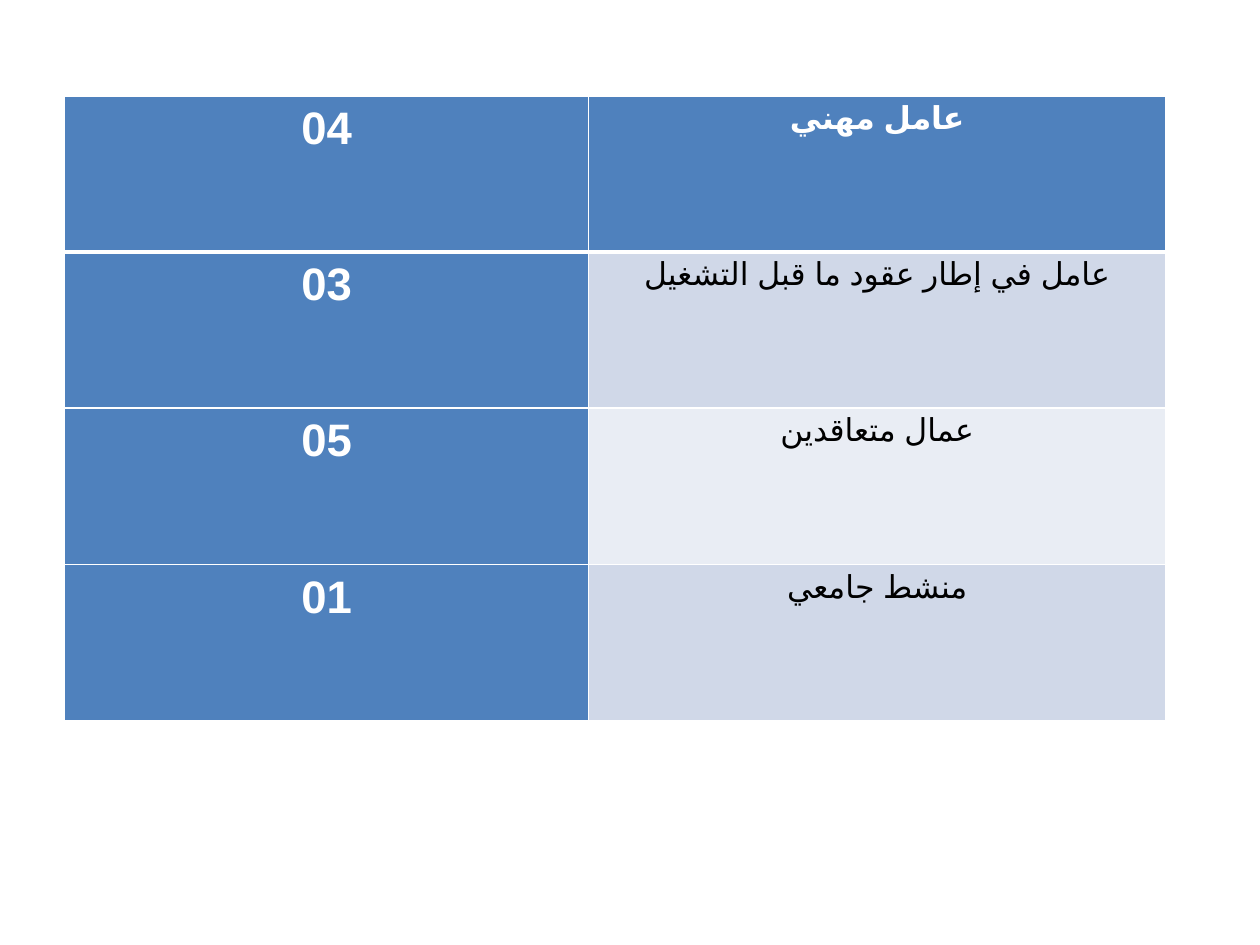
from lxml import etree
from pptx import Presentation
from pptx.dml.color import RGBColor
from pptx.enum.text import MSO_ANCHOR, PP_ALIGN
from pptx.oxml.ns import qn
from pptx.util import Pt

CENTER = PP_ALIGN.CENTER
TOP = MSO_ANCHOR.TOP

WHITE = RGBColor(0xFF, 0xFF, 0xFF)
BLACK = RGBColor(0x00, 0x00, 0x00)
BLUE = RGBColor(0x4F, 0x81, 0xBD)
BANDS = (RGBColor(0xD0, 0xD8, 0xE8), RGBColor(0xE9, 0xED, 0xF4))

STAFF = [
    ("04", "عامل مهني"),
    ("03", "عامل في إطار عقود ما قبل التشغيل"),
    ("05", "عمال متعاقدين"),
    ("01", "منشط جامعي"),
]
COLUMN_WIDTHS = (299.5, 329.8)
ROW_HEIGHT = 89.25
CELL_FORMAT = {
    "margin_left": Pt(5.4), "margin_right": Pt(5.4),
    "margin_top": Pt(0), "margin_bottom": Pt(0), "vertical_anchor": TOP,
}


def set_borders(cell, widths):
    """Draw white cell borders; widths maps a side letter to points."""
    properties = cell._tc.get_or_add_tcPr()
    for place, (side, width) in enumerate(widths.items()):
        line = etree.Element(qn(f"a:ln{side}"), w=str(Pt(width)))
        fill = etree.SubElement(line, qn("a:solidFill"))
        etree.SubElement(fill, qn("a:srgbClr"), val=str(WHITE))
        properties.insert(place, line)


def fill_cell(cell, text, fill, font_format, color, right_to_left):
    for name, value in CELL_FORMAT.items():
        setattr(cell, name, value)
    cell.fill.solid()
    cell.fill.fore_color.rgb = fill

    para = cell.text_frame.paragraphs[0]
    para.alignment = CENTER
    para.line_spacing = 1.15
    if right_to_left:
        para._p.get_or_add_pPr().set("rtl", "1")
    span = para.add_run()
    span.text = text
    for name, value in font_format.items():
        setattr(span.font, name, value)
    span.font.color.rgb = color

    # Arabic script font
    run_properties = span._r.get_or_add_rPr()
    run_properties.set("lang", "ar-DZ")
    etree.SubElement(run_properties, qn("a:cs"), typeface="Arial")


def add_staff_table(page, left, top, width, height):
    frame = page.shapes.add_table(len(STAFF), len(COLUMN_WIDTHS),
                                  Pt(left), Pt(top), Pt(width), Pt(height))
    table = frame.table
    table.horz_banding = False
    for column, column_width in zip(table.columns, COLUMN_WIDTHS):
        column.width = Pt(column_width)

    for index, (count, role) in enumerate(STAFF):
        table.rows[index].height = Pt(height / len(STAFF))
        heading = index == 0
        count_cell, role_cell = table.rows[index].cells

        # Count column, then role column
        fill_cell(count_cell, count, BLUE,
                  {"name": "Calibri", "size": Pt(26), "bold": True}, WHITE, True)
        fill_cell(role_cell, role, BLUE if heading else BANDS[(index - 1) % 2],
                  {"name": "Calibri", "size": Pt(18), "bold": heading},
                  WHITE if heading else BLACK, False)

        # Thick rule below the heading row
        widths = {"L": 1, "R": 1, "T": 3 if index == 1 else 1, "B": 3 if heading else 1}
        for cell in (count_cell, role_cell):
            set_borders(cell, widths)


def main():
    deck = Presentation()
    deck.slide_width, deck.slide_height = Pt(720), Pt(540)
    page = deck.slides.add_slide(deck.slide_layouts[6])
    add_staff_table(page, 36.9, 54.75, sum(COLUMN_WIDTHS), ROW_HEIGHT * len(STAFF))
    deck.save("out.pptx")


if __name__ == "__main__":
    main()
